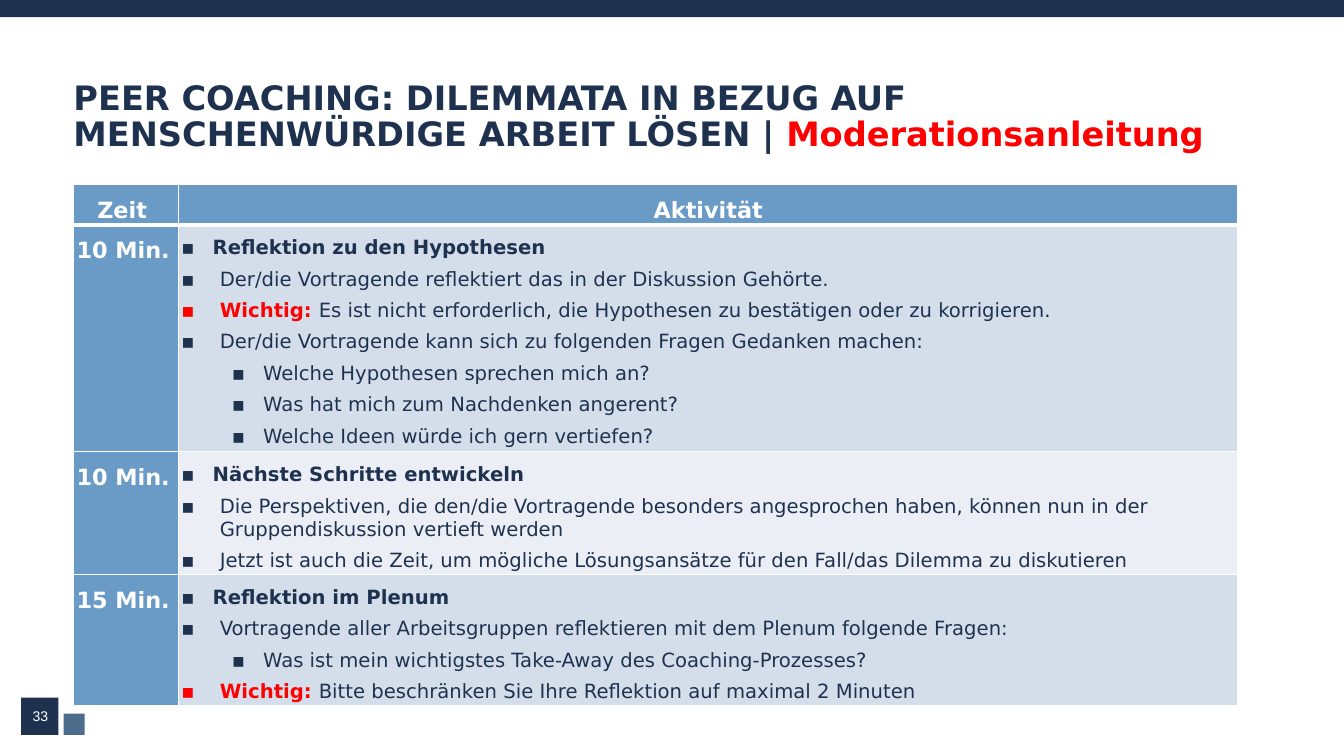
from lxml.etree import SubElement
from pptx import Presentation
from pptx.dml.color import RGBColor
from pptx.enum.text import MSO_ANCHOR, PP_ALIGN as ALIGN
from pptx.oxml import parse_xml
from pptx.oxml.ns import nsdecls, qn
from pptx.util import Inches, Pt

NAVY, BLUE, RED, WHITE = "1E3250", "699BC6", "FF0000", "FFFFFF"
FONT = "DejaVu Sans"


def rgb(value):
    return RGBColor.from_string(value)


def add_run(paragraph, text, size, color, bold=False, font=FONT):
    run = paragraph.add_run()
    run.text = text
    formats = {"size": Pt(size), "bold": bold, "name": font}
    for attribute, value in formats.items():
        setattr(run.font, attribute, value)
    run.font.color.rgb = rgb(color)


prs = Presentation()
prs.slide_width, prs.slide_height = Inches(13.33), Inches(7.5)
slide = prs.slides.add_slide(prs.slide_layouts[6])

# Top bar and the two squares at the page number
for left, top, width, height, color in [
    (0, 0, 13.33, 0.17, NAVY),
    (0.21, 6.92, 0.37, 0.37, NAVY),
    (0.63, 7.08, 0.21, 0.21, "4D6B8B"),
]:
    block = slide.shapes.add_shape(1, Inches(left), Inches(top), Inches(width), Inches(height))
    block.shadow.inherit = False
    block.fill.solid()
    block.fill.fore_color.rgb = rgb(color)
    block.line.fill.background()

title = slide.shapes.add_textbox(Inches(0.63), Inches(0.76), Inches(12.22), Inches(0.66)).text_frame
title.word_wrap = True
heading = title.paragraphs[0]
heading.line_spacing = 0.9
add_run(heading, "PEER COACHING: DILEMMATA IN BEZUG AUF MENSCHENWÜRDIGE ARBEIT LÖSEN | ", 24, NAVY, True)
add_run(heading, "Moderationsanleitung", 24, RED, True)

page = slide.shapes.add_textbox(Inches(0.07), Inches(6.99), Inches(0.66), Inches(0.23)).text_frame
page.word_wrap = True
page.vertical_anchor = MSO_ANCHOR.MIDDLE
page.paragraphs[0].alignment = ALIGN.CENTER
add_run(page.paragraphs[0], "33", 10, WHITE, font="Arial")

# Agenda: each phase has a time, a fill and lines of (kind, text)
INDENTS = {"head": (0.31, 0.31), "item": (0.38, 0.38), "important": (0.38, 0.38), "sub": (0.81, 0.31)}
phases = [
    ("10 Min.", "D4DEEA", [
        ("head", "Reflektion zu den Hypothesen"),
        ("item", "Der/die Vortragende reflektiert das in der Diskussion Gehörte."),
        ("important", "Es ist nicht erforderlich, die Hypothesen zu bestätigen oder zu korrigieren."),
        ("item", "Der/die Vortragende kann sich zu folgenden Fragen Gedanken machen:"),
        ("sub", "Welche Hypothesen sprechen mich an?"),
        ("sub", "Was hat mich zum Nachdenken angerent?"),
        ("sub", "Welche Ideen würde ich gern vertiefen?"),
    ]),
    ("10 Min.", "EBEFF5", [
        ("head", "Nächste Schritte entwickeln"),
        ("item", "Die Perspektiven, die den/die Vortragende besonders angesprochen haben, "
                 "können nun in der Gruppendiskussion vertieft werden"),
        ("item", "Jetzt ist auch die Zeit, um mögliche Lösungsansätze für den Fall/das Dilemma zu diskutieren"),
    ]),
    ("15 Min.", "D4DEEA", [
        ("head", "Reflektion im Plenum"),
        ("item", "Vortragende aller Arbeitsgruppen reflektieren mit dem Plenum folgende Fragen:"),
        ("sub", "Was ist mein wichtigstes Take-Away des Coaching-Prozesses?"),
        ("important", "Bitte beschränken Sie Ihre Reflektion auf maximal 2 Minuten"),
    ]),
]

agenda = slide.shapes.add_table(4, 2, Inches(0.73), Inches(1.83), Inches(11.55), Inches(4.91)).table
for column, width in zip(agenda.columns, (1.04, 10.51)):
    column.width = Inches(width)
for row, height in zip(agenda.rows, (0.32, 2.16, 1.18, 1.25)):
    row.height = Inches(height)

labels = [(0, 0, "Zeit ", ALIGN.CENTER), (0, 1, "Aktivität", ALIGN.CENTER)]
labels += [(number, 0, phase[0], ALIGN.JUSTIFY) for number, phase in enumerate(phases, 1)]
for row, column, text, alignment in labels:
    label = agenda.cell(row, column).text_frame.paragraphs[0]
    label.alignment = alignment
    label.line_spacing = 1.5
    label.space_before = Pt(6)
    add_run(label, text, 16, WHITE, True)

for number, (_, _, lines) in enumerate(phases, 1):
    activity = agenda.cell(number, 1).text_frame
    for position, (kind, text) in enumerate(lines):
        line = activity.add_paragraph() if position else activity.paragraphs[0]
        line.level = 1 if kind == "sub" else 0
        line.line_spacing = 1.5 if kind == "head" else 1.0
        line.space_before = Pt(6)
        if kind == "important":
            add_run(line, "Wichtig: ", 14, RED, True)
        add_run(line, text, 14, NAVY, kind == "head")
        margin, hanging = INDENTS[kind]
        properties = line._p.get_or_add_pPr()
        properties.set("marL", str(Inches(margin)))
        properties.set("indent", str(-Inches(hanging)))
        SubElement(properties, qn("a:buFont"), typeface=FONT)
        SubElement(properties, qn("a:buChar"), char="▪")

for row in range(4):
    for column in range(2):
        cell = agenda.cell(row, column)
        cell.margin_left = cell.margin_right = Inches(0.03)
        cell.margin_top = cell.margin_bottom = 0
        cell.fill.solid()
        cell.fill.fore_color.rgb = rgb(phases[row - 1][1] if row and column else BLUE)
        for order, side in enumerate("LRTB"):
            thick = (row, side) in [(0, "B"), (1, "T")]
            border = parse_xml(
                f'<a:ln{side} {nsdecls("a")} w="{Pt(3 if thick else 1)}">'
                f'<a:solidFill><a:srgbClr val="{WHITE}"/></a:solidFill></a:ln{side}>'
            )
            cell._tc.get_or_add_tcPr().insert(order, border)

prs.save("out.pptx")
